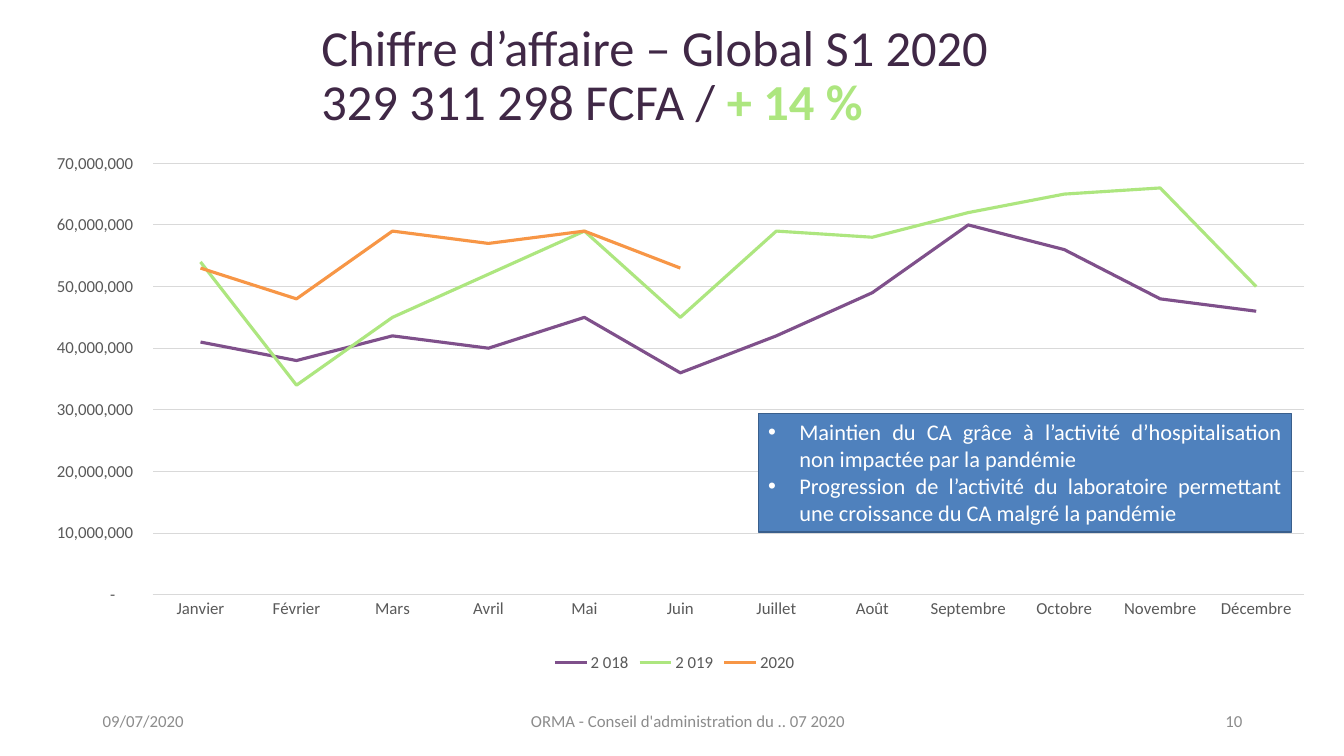
from lxml import etree
from pptx import Presentation
from pptx.chart.data import CategoryChartData
from pptx.dml.color import RGBColor
from pptx.enum import chart as charts, shapes, text
from pptx.oxml import parse_xml
from pptx.oxml.ns import nsdecls, qn
from pptx.util import Inches, Pt

PURPLE, GREEN, ORANGE = "7F508B", "ADE67F", "F79646"
GREY, GRID = "595959", "D9D9D9"


def color(value):
    return RGBColor.from_string(value)


def style(font, size, value, bold=False):
    formats = {"name": "Calibri", "size": Pt(size), "bold": bold}
    for name, setting in formats.items():
        setattr(font, name, setting)
    font.color.rgb = color(value)


presentation = Presentation()
presentation.slide_width, presentation.slide_height = Inches(13.33), Inches(7.5)
slide = presentation.slides.add_slide(presentation.slide_layouts[6])

# Title
title = slide.shapes.add_textbox(Inches(3.09), Inches(0.15), Inches(9.46), Inches(1.23))
title.text_frame.word_wrap = True
title.text_frame.vertical_anchor = text.MSO_ANCHOR.MIDDLE
paragraph = title.text_frame.paragraphs[0]
paragraph.line_spacing = 0.9
style(paragraph.font, 36, "402846")
for words, value, bold in [
    ("Chiffre d’affaire – Global S1 2020", "402846", False),
    ("329 311 298 FCFA / ", "402846", False),
    ("+ 14 %", GREEN, True),
]:
    run = paragraph.add_run()
    run.text = words
    style(run.font, 36, value, bold)
    if words.startswith("Chiffre"):
        paragraph.add_line_break()

# Footer
for words, left, width, alignment in [
    ("09/07/2020", 0.92, 3, text.PP_ALIGN.LEFT),
    ("ORMA - Conseil d'administration du .. 07 2020", 4.7, 4.25, text.PP_ALIGN.CENTER),
    ("10", 9.42, 3, text.PP_ALIGN.RIGHT),
]:
    footer = slide.shapes.add_textbox(Inches(left), Inches(6.95), Inches(width), Inches(0.4))
    footer.text_frame.word_wrap = True
    footer.text_frame.vertical_anchor = text.MSO_ANCHOR.MIDDLE
    paragraph = footer.text_frame.paragraphs[0]
    paragraph.text = words
    paragraph.alignment = alignment
    style(paragraph.runs[0].font, 12, "8C8C8C")

# Monthly revenue, in millions
revenue = [
    ("2 018", PURPLE, [41, 38, 42, 40, 45, 36, 42, 49, 60, 56, 48, 46]),
    ("2 019", GREEN, [54, 34, 45, 52, 59, 45, 59, 58, 62, 65, 66, 50]),
    ("2020", ORANGE, [53, 48, 59, 57, 59, 53] + [None] * 6),
]
number_format = r'_-* #,##0\ _€_-;\-* #,##0\ _€_-;_-* "-"??\ _€_-'
data = CategoryChartData(number_format=number_format)
data.categories = ["Janvier", "Février", "Mars", "Avril", "Mai", "Juin", "Juillet",
                   "Août", "Septembre", "Octobre", "Novembre", "Décembre"]
for year, _, millions in revenue:
    data.add_series(year, [None if value is None else value * 1_000_000 for value in millions])

# Line chart
chart = slide.shapes.add_chart(
    charts.XL_CHART_TYPE.LINE, Inches(0.33), Inches(1.49), Inches(12.72), Inches(5.22), data
).chart
style(chart.font, 12, GREY)
chart.has_title = False
chart.plots[0].vary_by_categories = False
for series, (_, value, _) in zip(chart.plots[0].series, revenue):
    series.smooth = False
    series.marker.style = charts.XL_MARKER_STYLE.NONE
    series.format.line.width = Pt(2.25)
    series.format.line.color.rgb = color(value)

# Legend
chart.has_legend = True
chart.legend.position = charts.XL_LEGEND_POSITION.BOTTOM
chart.legend.include_in_layout = False
style(chart.legend.font, 12, GREY)

# Axes
for axis in (chart.category_axis, chart.value_axis):
    axis.major_tick_mark = axis.minor_tick_mark = charts.XL_TICK_MARK.NONE
    style(axis.tick_labels.font, 12, GREY)
value_axis = chart.value_axis
for name, setting in {"minimum_scale": 0, "maximum_scale": 70_000_000,
                      "major_unit": 10_000_000}.items():
    setattr(value_axis, name, setting)
value_axis.tick_labels.number_format = number_format
value_axis.tick_labels.number_format_is_linked = False
value_axis.format.line.fill.background()
for line in (chart.category_axis.format.line, value_axis.major_gridlines.format.line):
    line.width = Pt(0.75)
    line.color.rgb = color(GRID)

# Plot area position
plot_area = chart.plots[0]._element.getparent()
for layout in plot_area.findall(qn("c:layout")):
    plot_area.remove(layout)
settings = [("layoutTarget", "inner"), ("xMode", "edge"), ("yMode", "edge"),
            ("x", 0.093), ("y", 0.025), ("w", 0.898), ("h", 0.82)]
parts = "".join(f'<c:{name} val="{setting}"/>' for name, setting in settings)
plot_area.insert(0, parse_xml(
    f'<c:layout {nsdecls("c")}><c:manualLayout>{parts}</c:manualLayout></c:layout>'))

# Comment box
comment = slide.shapes.add_shape(
    shapes.MSO_SHAPE.RECTANGLE, Inches(7.52), Inches(4.1), Inches(5.29), Inches(1.18))
comment.shadow.inherit = False
comment.fill.solid()
comment.fill.fore_color.rgb = color("4F81BD")
comment.line.color.rgb = color("3A5F8C")
comment.line.width = Pt(1)
frame = comment.text_frame
for name, setting in {"word_wrap": True, "vertical_anchor": text.MSO_ANCHOR.TOP,
                      "auto_size": text.MSO_AUTO_SIZE.SHAPE_TO_FIT_TEXT}.items():
    setattr(frame, name, setting)
remarks = [
    "Maintien du CA grâce à l’activité d’hospitalisation non impactée par la pandémie",
    "Progression de l’activité du laboratoire permettant une croissance du CA malgré la pandémie",
]
for index, remark in enumerate(remarks):
    paragraph = frame.add_paragraph() if index else frame.paragraphs[0]
    paragraph.text = remark
    paragraph.alignment = text.PP_ALIGN.JUSTIFY
    properties = paragraph._p.get_or_add_pPr()
    properties.set("marL", str(Inches(0.31)))
    properties.set("indent", str(-Inches(0.31)))
    etree.SubElement(properties, qn("a:buFont"), typeface="Arial")
    etree.SubElement(properties, qn("a:buChar"), char="•")
    style(paragraph.runs[0].font, 16, "FFFFFF")

presentation.save("out.pptx")
